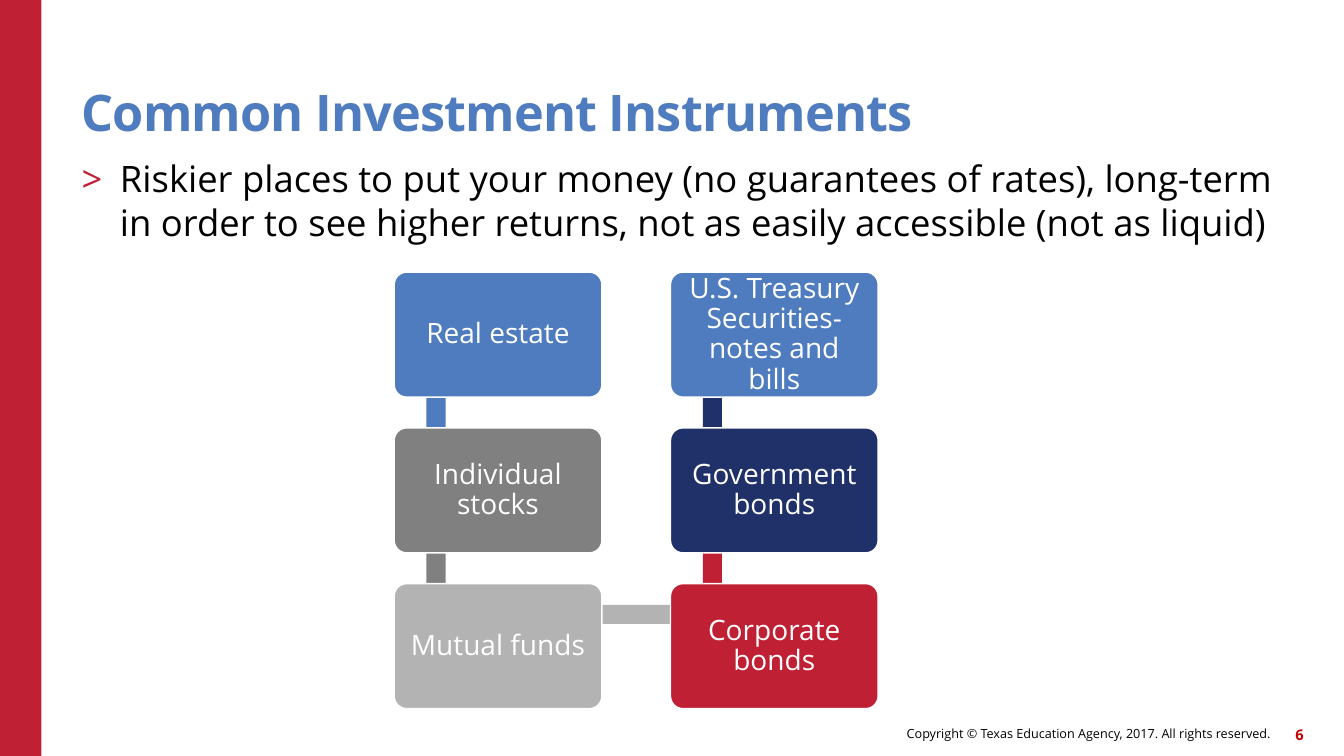
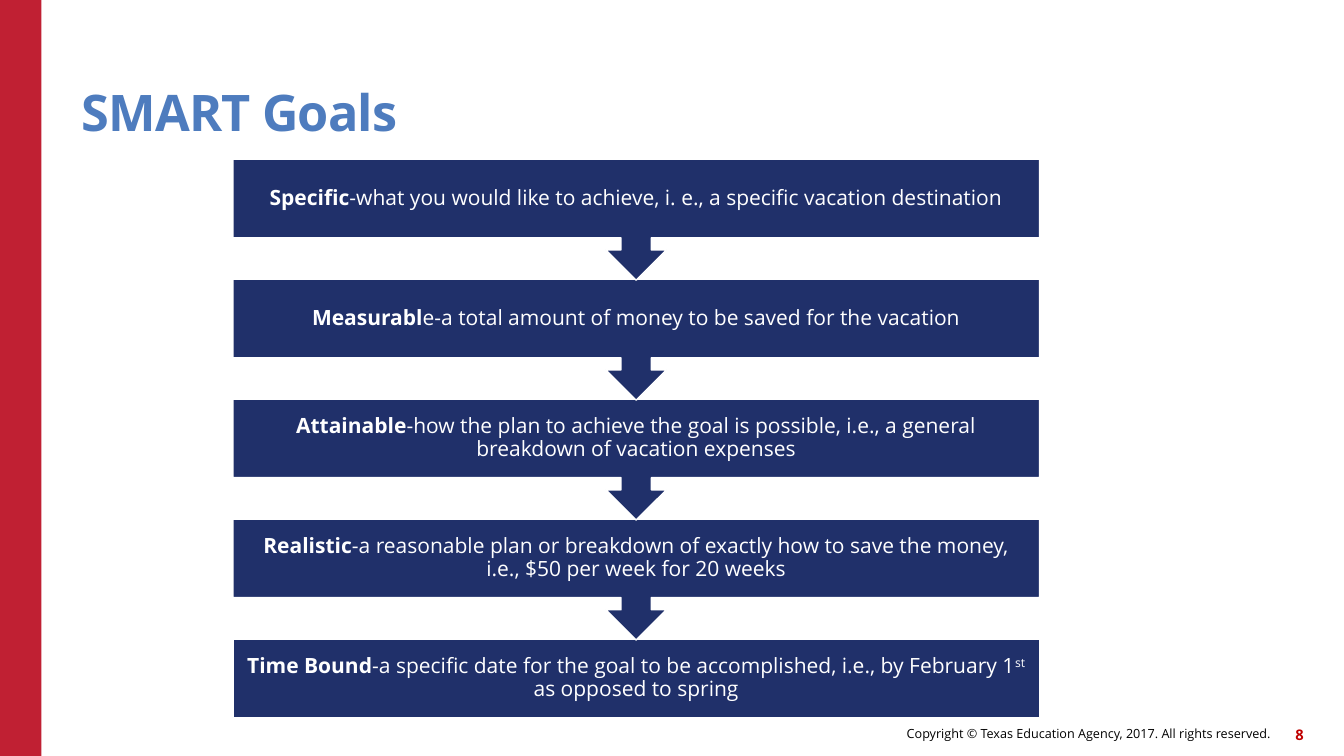
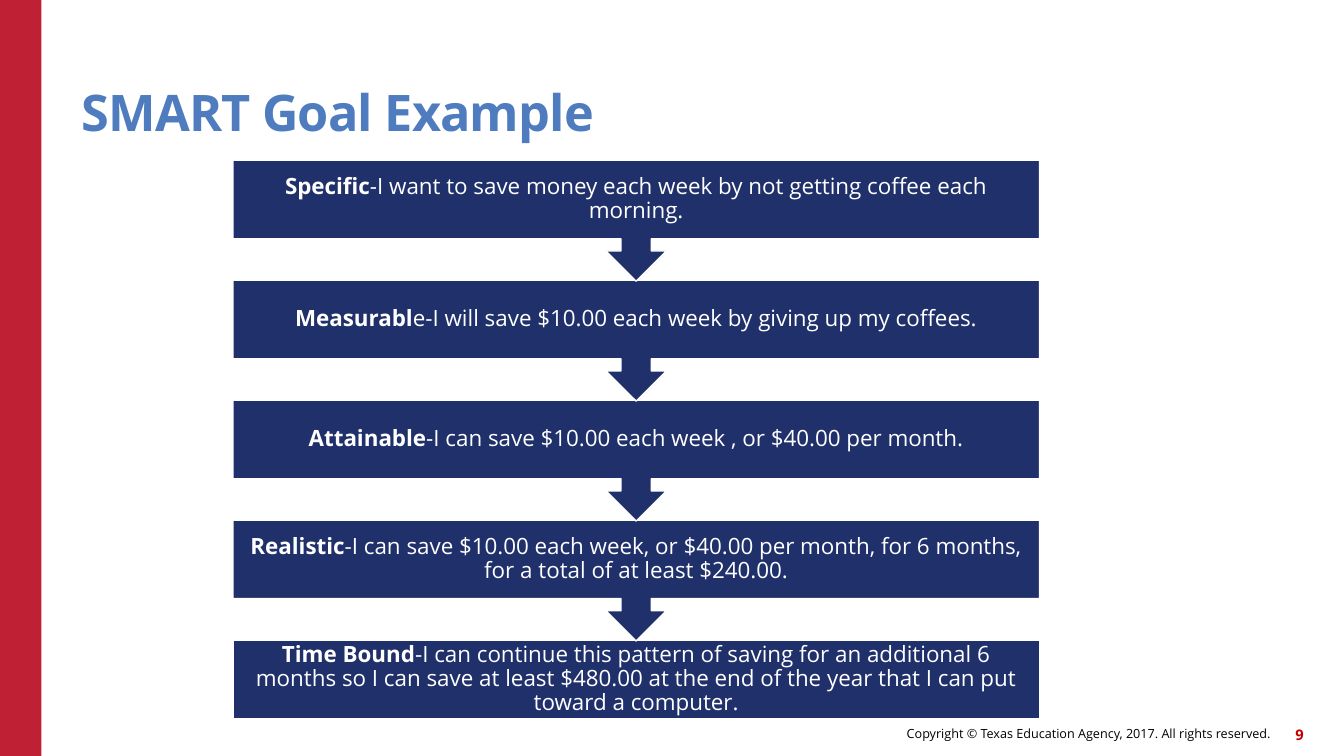
from lxml import etree
from pptx import Presentation
from pptx.dml.color import RGBColor
from pptx.enum.shapes import MSO_SHAPE
from pptx.enum.text import MSO_ANCHOR, PP_ALIGN
from pptx.oxml.ns import qn
from pptx.util import Inches, Pt

RECT, ROUNDED, CALLOUT = (MSO_SHAPE.RECTANGLE, MSO_SHAPE.ROUNDED_RECTANGLE,
                          MSO_SHAPE.DOWN_ARROW_CALLOUT)
TOP, MIDDLE, BOTTOM = MSO_ANCHOR.TOP, MSO_ANCHOR.MIDDLE, MSO_ANCHOR.BOTTOM
LEFT, CENTER, RIGHT = PP_ALIGN.LEFT, PP_ALIGN.CENTER, PP_ALIGN.RIGHT

WIDTH, HEIGHT = 13.33, 7.5
FONT = "Open Sans"
COLORS = {
    "red": "C02033", "number": "C00000", "blue": "4E7CBE", "navy": "203069",
    "step": "20306A", "gray": "808080", "silver": "B3B3B3",
    "white": "FFFFFF", "black": "000000",
}

# Content
COPYRIGHT = "Copyright © Texas Education Agency, 2017. All rights reserved."
RISK_NOTE = ("Riskier places to put your money (no guarantees of rates), long-term "
             "in order to see higher returns, not as easily accessible (not as liquid)")
# Chain of instruments: label, colour, column, row
INSTRUMENTS = [
    ("Real estate", "blue", 0, 0),
    ("Individual stocks", "gray", 0, 1),
    ("Mutual funds", "silver", 0, 2),
    ("Corporate bonds", "red", 1, 2),
    ("Government bonds", "navy", 1, 1),
    ("U.S. Treasury Securities-notes and bills", "blue", 1, 0),
]
# Steps: bold lead, explanation, then optional superscript and remainder
GOALS = [
    ("Specific", "-what you would like to achieve, i. e., a specific vacation destination"),
    ("Measurabl", "e-a total amount of money to be saved for the vacation"),
    ("Attainable", "-how the plan to achieve the goal is possible, i.e., a general "
                   "breakdown of vacation expenses"),
    ("Realistic", "-a reasonable plan or breakdown of exactly how to save the money, "
                  "i.e., $50 per week for 20 weeks"),
    ("Time Bound", "-a specific date for the goal to be accomplished, i.e., by February 1",
     "st", " as opposed to spring"),
]
EXAMPLE = [
    ("Specific", "-I want to save money each week by not getting coffee each morning."),
    ("Measurabl", "e-I will save $10.00 each week by giving up my coffees."),
    ("Attainable", "-I can save $10.00 each week , or $40.00 per month."),
    ("Realistic", "-I can save $10.00 each week, or $40.00 per month, for 6 months, "
                  "for a total of at least $240.00."),
    ("Time Bound", "-I can continue this pattern of saving for an additional 6 months "
                   "so I can save at least $480.00 at the end of the year that I can put "
                   "toward a computer."),
]


def rgb(name):
    return RGBColor.from_string(COLORS[name])


def add_block(slide, kind, box, fill, outlined=False):
    block = slide.shapes.add_shape(kind, *map(Inches, box))
    block.shadow.inherit = False
    block.fill.solid()
    block.fill.fore_color.rgb = rgb(fill)
    if outlined:
        block.line.color.rgb = rgb("white")
        block.line.width = Pt(1)
    else:
        block.line.fill.background()
    return block


def set_frame(shape, inset, anchor, align, spacing=None):
    frame = shape.text_frame
    frame.word_wrap = True
    frame.vertical_anchor = anchor
    frame.margin_left = frame.margin_right = Inches(inset)
    frame.margin_top = frame.margin_bottom = Inches(inset)
    paragraph = frame.paragraphs[0]
    paragraph.alignment = align
    if spacing:
        paragraph.line_spacing = spacing
    return paragraph


def add_run(paragraph, text, size, color, bold=False, **attributes):
    run = paragraph.add_run()
    run.text = text
    run.font.name = FONT
    run.font.size = Pt(size)
    run.font.bold = bold
    run.font.color.rgb = rgb(color)
    for name, value in attributes.items():
        run.font._element.set(name, str(value))


def add_label(slide, box, anchor, align, spacing=None):
    label = slide.shapes.add_textbox(*map(Inches, box))
    return set_frame(label, 0, anchor, align, spacing)


def add_page(deck, title, number):
    """Slide with the shared band, footer, page number and title."""
    slide = deck.slides.add_slide(deck.slide_layouts[6])
    add_block(slide, RECT, (0, 0, 0.41, HEIGHT), "red")
    footer = add_label(slide, (6.14, 7.12, 6.46, 0.32), MIDDLE, RIGHT)
    add_run(footer, COPYRIGHT, 9, "black")
    page = add_label(slide, (12.51, 7.13, 0.42, 0.32), MIDDLE, RIGHT)
    add_run(page, number, 10.5, "number", True)
    heading = add_label(slide, (0.81, 0.45, 11, 0.96), BOTTOM, LEFT, 0.9)
    add_run(heading, title, 36, "blue", True, spc=-60)
    return slide


def add_bullet(slide, text):
    paragraph = add_label(slide, (0.81, 1.55, 12.09, 1), TOP, LEFT)
    properties = paragraph._p.get_or_add_pPr()
    properties.set("marL", str(Inches(0.38)))
    properties.set("indent", str(-Inches(0.38)))
    tint = etree.SubElement(properties, qn("a:buClr"))
    etree.SubElement(tint, qn("a:srgbClr"), val=COLORS["red"])
    etree.SubElement(properties, qn("a:buFont"), typeface=FONT)
    etree.SubElement(properties, qn("a:buChar"), char=">")
    add_run(paragraph, text, 26, "black")


def add_chain(slide, nodes):
    left, top, column_step, row_step = 3.91, 2.7, 2.74, 1.545
    width, height, bar = 2.06, 1.24, 0.19
    places = [(left + column * column_step, top + row * row_step)
              for _, _, column, row in nodes]
    # Bars run behind the nodes, in the colour of the node they leave
    for (_, color, _, _), (x1, y1), (x2, y2) in zip(nodes, places, places[1:]):
        x, y = min(x1, x2), min(y1, y2)
        if x1 == x2:
            box = (x + 0.32, y + 0.31, bar, 1.53)
        else:
            box = (x + 0.42, y + 0.21, column_step, bar)
        add_block(slide, RECT, box, color)
    for (label, color, _, _), (x, y) in zip(nodes, places):
        node = add_block(slide, ROUNDED, (x, y, width, height), color, True)
        node.adjustments[0] = 0.1
        add_run(set_frame(node, 0.08, MIDDLE, CENTER, 0.9), label, 20, "white")


def add_steps(slide, steps, top, size):
    pitch, body, callout = 1.19, 0.78, 1.2
    last = len(steps) - 1
    # Drawn from the bottom up so that each arrow tip lies over the next step
    for index in range(last, -1, -1):
        kind, height = (RECT, body) if index == last else (CALLOUT, callout)
        box = (2.31, top + index * pitch, 8, height)
        step = add_block(slide, kind, box, "step", True)
        paragraph = set_frame(step, 0.12, MIDDLE, CENTER, 0.9)
        lead, explanation, *ending = steps[index]
        add_run(paragraph, lead, size, "white", True)
        add_run(paragraph, explanation, size, "white")
        if ending:
            add_run(paragraph, ending[0], size, "white", baseline=30000)
            add_run(paragraph, ending[1], size, "white")


def main():
    deck = Presentation()
    deck.slide_width, deck.slide_height = Inches(WIDTH), Inches(HEIGHT)

    instruments = add_page(deck, "Common Investment Instruments", "6")
    add_bullet(instruments, RISK_NOTE)
    add_chain(instruments, INSTRUMENTS)

    add_steps(add_page(deck, "SMART Goals", "8"), GOALS, 1.58, 15)
    add_steps(add_page(deck, "SMART Goal Example", "9"), EXAMPLE, 1.59, 16)
    deck.save("out.pptx")


if __name__ == "__main__":
    main()
